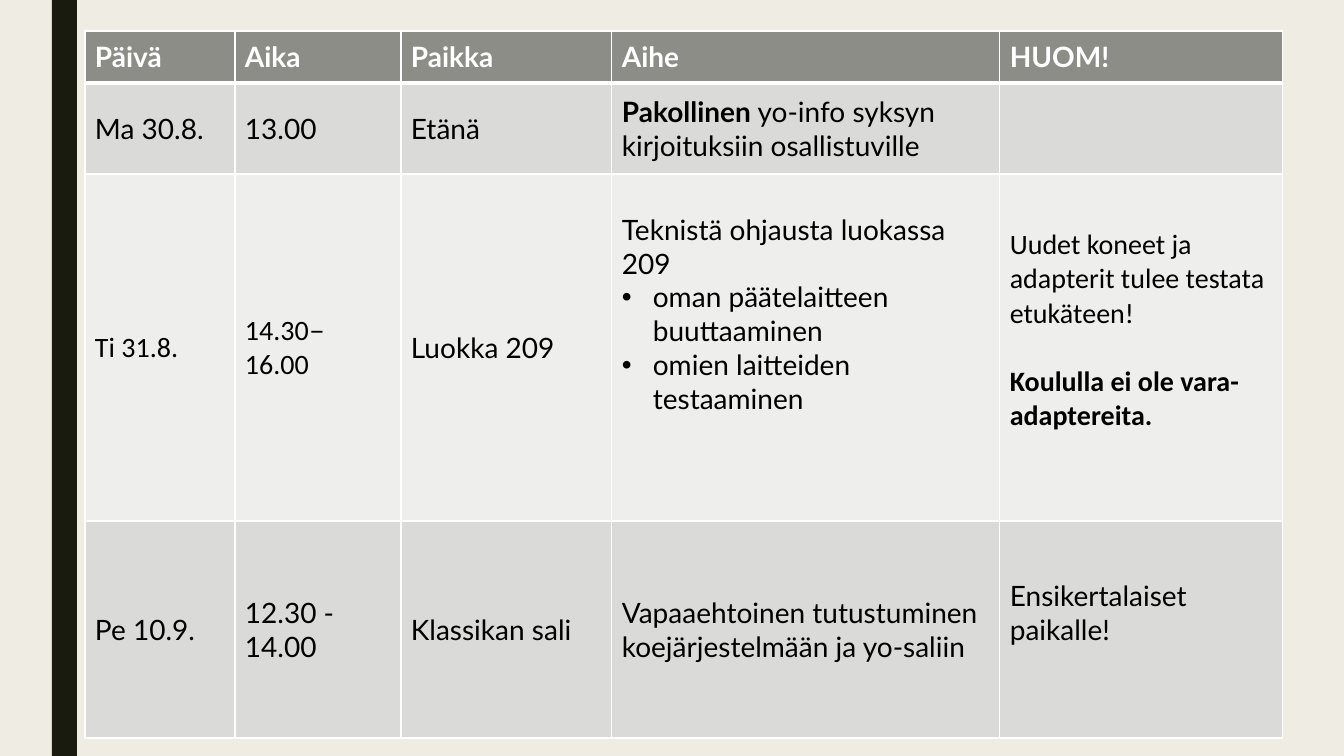
import pptx
import pptx.dml.color
import pptx.enum.shapes
import pptx.enum.text
import pptx.oxml
import pptx.oxml.ns
import pptx.util

COLOURS = {
    "page": "EFEDE3",
    "stripe": "191B0E",
    "header": "8C8D86",
    "odd": "DADBD9",
    "even": "EEEEED",
    "white": "FFFFFF",
    "black": "000000",
}
PX = 914400 / 100.8
NAMESPACE = pptx.oxml.ns.nsdecls("a")


def px(length):
    return pptx.util.Emu(round(length * PX))


def colour(name):
    return pptx.dml.color.RGBColor.from_string(COLOURS[name])


class Slide:
    font = "Lato"
    size = 20
    margin = {"left": 10, "top": 5, "right": 10, "bottom": 5}

    def __init__(self, deck):
        self.page = deck.slides.add_slide(deck.slide_layouts[6])
        background = self.page.background.fill
        background.solid()
        background.fore_color.rgb = colour("page")

    def bar(self, left, top, width, height, fill):
        shape = self.page.shapes.add_shape(
            pptx.enum.shapes.MSO_SHAPE.RECTANGLE, px(left), px(top), px(width), px(height))
        shape.shadow.inherit = False
        shape.fill.solid()
        shape.fill.fore_color.rgb = colour(fill)
        shape.line.fill.background()

    def table(self, left, top, widths, heights):
        frame = self.page.shapes.add_table(
            len(heights), len(widths), px(left), px(top), px(sum(widths)), px(sum(heights)))
        table = frame.table
        table.first_row = table.horz_banding = False
        for column, width in zip(table.columns, widths):
            column.width = px(width)
        for row, height in zip(table.rows, heights):
            row.height = px(height)
        return table

    def cell(self, cell, paragraphs, fill, ink="black", rules=(1, 1, 1, 1), margin=None):
        properties = cell._tc.get_or_add_tcPr()
        for side, points in zip("LRTB", rules):
            properties.append(pptx.oxml.parse_xml(
                f'<a:ln{side} {NAMESPACE} w="{points * 12700}"><a:solidFill>'
                f'<a:srgbClr val="{COLOURS["white"]}"/></a:solidFill></a:ln{side}>'))
        cell.fill.solid()
        cell.fill.fore_color.rgb = colour(fill)
        cell.vertical_anchor = pptx.enum.text.MSO_ANCHOR.MIDDLE
        for side, length in {**self.margin, **(margin or {})}.items():
            setattr(cell, f"margin_{side}", px(length))
        frame = cell.text_frame
        for index, options in enumerate(paragraphs):
            para = frame.add_paragraph() if index else frame.paragraphs[0]
            self.paragraph(para, ink, **options)

    def paragraph(self, para, ink, text, bold=False, font=None, bullet=False, before=0):
        if bullet:
            self.bullet(para)
        if before:
            para.space_before = pptx.util.Pt(before)
        para.font.size = pptx.util.Pt(self.size)
        para.font.name = font or self.font
        para.font.color.rgb = colour(ink)
        spans = [(text, {})] if isinstance(text, str) else text
        if isinstance(text, str):
            para.font.bold = bold
        for words, style in spans:
            span = para.add_run()
            span.text = words
            for name, value in style.items():
                setattr(span.font, name, value)

    def bullet(self, para):
        properties = para._p.get_or_add_pPr()
        properties.set("marL", str(px(31)))
        properties.set("indent", str(-px(31)))
        properties.append(pptx.oxml.parse_xml(f'<a:buFont {NAMESPACE} typeface="Arial"/>'))
        properties.append(pptx.oxml.parse_xml(f'<a:buChar {NAMESPACE} char="•"/>'))


def plain(text, **options):
    return [{"text": text, **options}]


HEADERS = ["Päivä", "Aika", "Paikka", "Aihe", "HUOM!"]

# Each cell: its paragraphs, then any margins that differ
EVENTS = [
    [
        (plain("Ma 30.8."),),
        (plain("13.00"),),
        (plain("Etänä"),),
        (plain([("Pakollinen", {"bold": True}),
                (" yo-info syksyn kirjoituksiin osallistuville", {"bold": False})]),),
        ([],),
    ],
    [
        (plain("Ti 31.8.", font="Calibri"),),
        (plain([("14.30", {"name": "Calibri"}), ("–", {"name": "Lato"}),
                ("16.00", {"name": "Calibri"})]), {"right": 30}),
        (plain("Luokka 209"),),
        (plain("Teknistä ohjausta luokassa 209")
         + plain("oman päätelaitteen buuttaaminen", bullet=True)
         + plain("omien laitteiden testaaminen", bullet=True), {"bottom": 72}),
        (plain("Uudet koneet ja adapterit tulee testata etukäteen!", font="Calibri")
         + plain("Koululla ei ole vara-adaptereita.", font="Calibri", bold=True, before=24),
         {"bottom": 39}),
    ],
    [
        (plain("Pe 10.9."),),
        (plain("12.30 - 14.00"),),
        (plain("Klassikan sali"),),
        (plain("Vapaaehtoinen tutustuminen koejärjestelmään ja yo-saliin"),),
        (plain("Ensikertalaiset paikalle!"), {"bottom": 39}),
    ],
]


def main():
    deck = pptx.Presentation()
    deck.slide_width, deck.slide_height = px(1344), px(756)
    slide = Slide(deck)

    # Dark stripe on the left
    slide.bar(52, 0, 25, 756, "stripe")

    # Timetable
    table = slide.table(85, 31, [150, 166, 211, 388, 283], [52, 91, 347, 217])
    for column, title in enumerate(HEADERS):
        slide.cell(table.cell(0, column), plain(title, bold=True), "header", "white", (1, 1, 1, 3))
    for row, event in enumerate(EVENTS, start=1):
        fill = "odd" if row % 2 else "even"
        rules = (1, 1, 3 if row == 1 else 1, 1)
        for column, (paragraphs, *margin) in enumerate(event):
            slide.cell(table.cell(row, column), paragraphs, fill, rules=rules,
                       margin=margin[0] if margin else None)

    deck.save("out.pptx")


if __name__ == "__main__":
    main()
